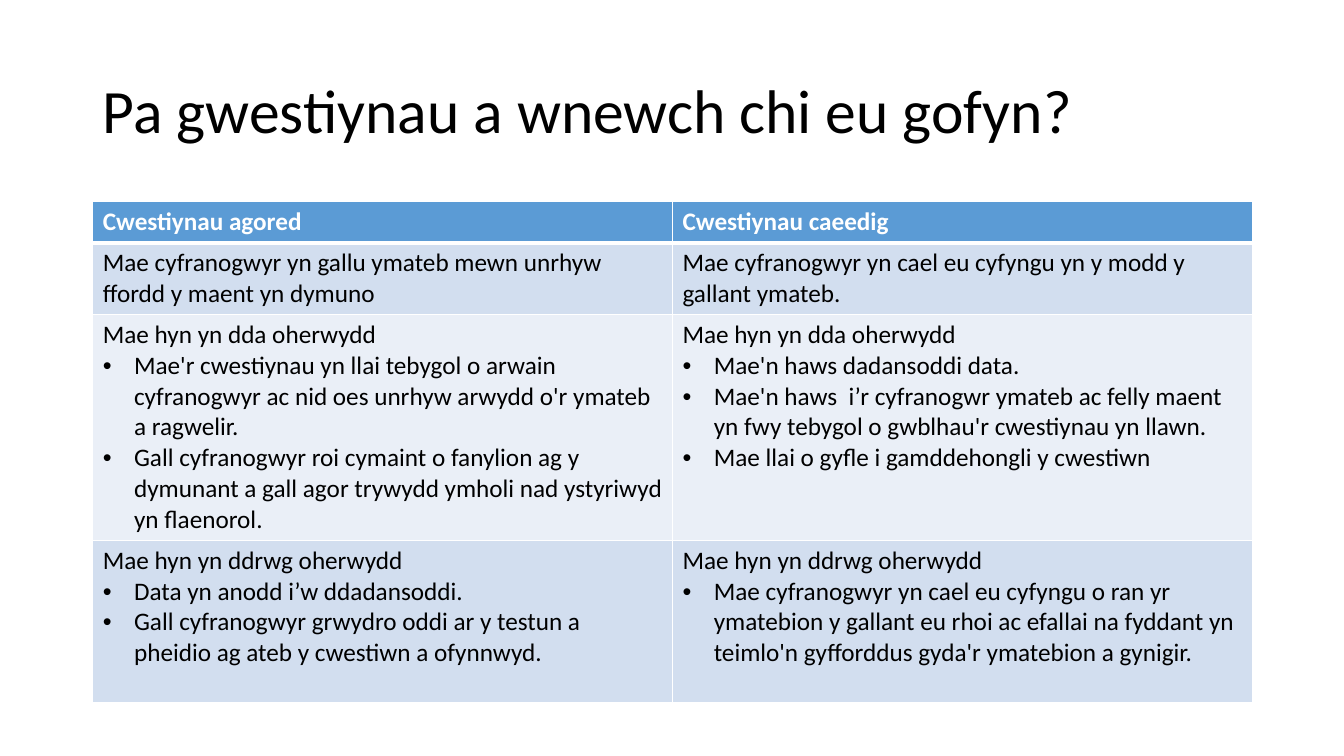
from dataclasses import dataclass

from lxml.etree import SubElement
from pptx import Presentation
from pptx.dml.color import RGBColor
from pptx.enum.text import MSO_ANCHOR, PP_ALIGN
from pptx.oxml.ns import qn
from pptx.util import Pt

PX = 9144  # EMU in one px, 100 px to the inch


@dataclass(frozen=True)
class Theme:
    font: str = "Calibri"
    title_size: int = 44
    body_size: int = 18
    text: str = "000000"
    white: str = "FFFFFF"
    header: str = "5B9BD5"
    band_dark: str = "D2DEEF"
    band_light: str = "EAEFF7"


theme = Theme()


def style_paragraph(para, size, color, bold=False):
    para.alignment = PP_ALIGN.LEFT
    para.font.name = theme.font
    para.font.size = Pt(size)
    para.font.bold = bold
    para.font.color.rgb = RGBColor.from_string(color)


def add_border(cell, side, points):
    line = SubElement(cell._tc.get_or_add_tcPr(), qn(f"a:ln{side}"), w=str(Pt(points)))
    fill = SubElement(line, qn("a:solidFill"))
    SubElement(fill, qn("a:srgbClr"), val=theme.white)


deck = Presentation()
deck.slide_width, deck.slide_height = 1333 * PX, 750 * PX
page = deck.slides.add_slide(deck.slide_layouts[5])

# Title
title = page.shapes.title
title.left, title.top, title.width, title.height = 92 * PX, 40 * PX, 1150 * PX, 145 * PX
title.text_frame.text = "Pa gwestiynau a wnewch chi eu gofyn?"
title.text_frame.vertical_anchor = MSO_ANCHOR.MIDDLE
title_para = title.text_frame.paragraphs[0]
title_para.line_spacing = 0.9
style_paragraph(title_para, theme.title_size, theme.text)

# Table content: in each cell the first line is plain, the others are bullets
rows = [
    (41, theme.header, [
        ["Cwestiynau agored"],
        ["Cwestiynau caeedig"],
    ]),
    (70, theme.band_dark, [
        ["Mae cyfranogwyr yn gallu ymateb mewn unrhyw ffordd y maent yn dymuno"],
        ["Mae cyfranogwyr yn cael eu cyfyngu yn y modd y gallant ymateb."],
    ]),
    (224, theme.band_light, [
        ["Mae hyn yn dda oherwydd",
         "Mae'r cwestiynau yn llai tebygol o arwain cyfranogwyr ac nid oes "
         "unrhyw arwydd o'r ymateb a ragwelir.",
         "Gall cyfranogwyr roi cymaint o fanylion ag y dymunant a gall agor "
         "trywydd ymholi nad ystyriwyd yn flaenorol."],
        ["Mae hyn yn dda oherwydd",
         "Mae'n haws dadansoddi data.",
         "Mae'n haws  i’r cyfranogwr ymateb ac felly maent yn fwy tebygol o "
         "gwblhau'r cwestiynau yn llawn.",
         "Mae llai o gyfle i gamddehongli y cwestiwn"],
    ]),
    (161, theme.band_dark, [
        ["Mae hyn yn ddrwg oherwydd",
         "Data yn anodd i’w ddadansoddi.",
         "Gall cyfranogwyr grwydro oddi ar y testun a pheidio ag ateb y "
         "cwestiwn a ofynnwyd."],
        ["Mae hyn yn ddrwg oherwydd",
         "Mae cyfranogwyr yn cael eu cyfyngu o ran yr ymatebion y gallant eu "
         "rhoi ac efallai na fyddant yn teimlo'n gyfforddus gyda'r ymatebion "
         "a gynigir."],
    ]),
]

# Table
table_height = sum(height for height, _, _ in rows)
table = page.shapes.add_table(
    len(rows), 2, 92 * PX, 200 * PX, 1150 * PX, table_height * PX).table

for row_index, (height, fill_color, cell_texts) in enumerate(rows):
    table.rows[row_index].height = height * PX
    is_header = row_index == 0
    for column_index, lines in enumerate(cell_texts):
        cell = table.cell(row_index, column_index)

        # Borders, with a thick rule under the header
        add_border(cell, "L", 1)
        add_border(cell, "R", 1)
        add_border(cell, "T", 3 if row_index == 1 else 1)
        add_border(cell, "B", 3 if is_header else 1)
        cell.fill.solid()
        cell.fill.fore_color.rgb = RGBColor.from_string(fill_color)

        # Text
        cell.text_frame.text = "\n".join(lines)
        for line_index, para in enumerate(cell.text_frame.paragraphs):
            if line_index > 0:
                properties = para._p.get_or_add_pPr()
                properties.set("marL", str(31 * PX))
                properties.set("indent", str(-31 * PX))
                SubElement(properties, qn("a:buFont"), typeface="Arial")
                SubElement(properties, qn("a:buChar"), char="•")
            style_paragraph(para, theme.body_size,
                            theme.white if is_header else theme.text, is_header)

deck.save("out.pptx")
